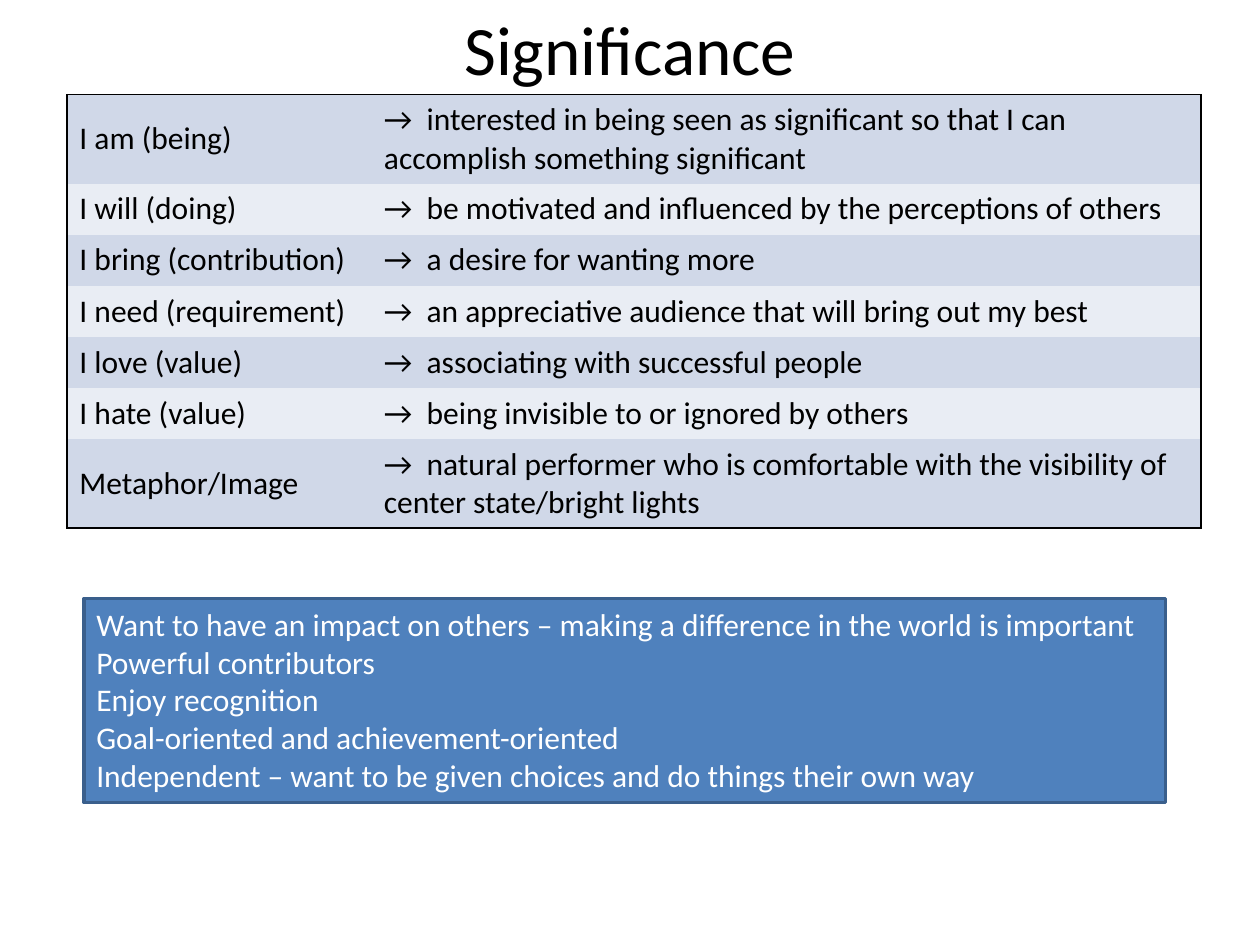
from dataclasses import dataclass

from lxml.etree import SubElement
from pptx import Presentation
from pptx.dml.color import RGBColor as Color
from pptx.enum.shapes import MSO_SHAPE as Shape
from pptx.enum.text import MSO_ANCHOR as Anchor, PP_ALIGN as Align
from pptx.oxml.ns import qn
from pptx.util import Pt

TITLE = "Significance"
STATEMENTS = [
    ("I am (being)", "interested in being seen as significant so that I can accomplish something significant"),
    ("I will (doing)", "be motivated and influenced by the perceptions of others"),
    ("I bring (contribution)", "a desire for wanting more"),
    ("I need (requirement)", "an appreciative audience that will bring out my best"),
    ("I love (value)", "associating with successful people"),
    ("I hate (value)", "being invisible to or ignored by others"),
    ("Metaphor/Image", "natural performer who is comfortable with the visibility of center state/bright lights"),
]
TRAITS = [
    "Want to have an impact on others – making a difference in the world is important",
    "Powerful contributors",
    "Enjoy recognition",
    "Goal-oriented and achievement-oriented",
    "Independent – want to be given choices and do things their own way",
]

TITLE_AREA = (36, 12.25, 648, 30)
TABLE_LEFT, TABLE_TOP = 38.2, 54
COLUMN_WIDTHS = (174, 474)
ROW_HEIGHT, TALL_ROW_HEIGHT = 29.2, 50.9
TALL_ROWS = (0, len(STATEMENTS) - 1)
TRAITS_AREA = (48, 342, 618, 116.64)


@dataclass(frozen=True)
class Theme:
    font: str = "Calibri"
    title_size: float = 39.6
    body_size: float = 18
    text: str = "000000"
    light_text: str = "FFFFFF"
    bands: tuple = ("D0D8E8", "E9EDF4")
    box_fill: str = "4F81BD"
    box_line: str = "3A5F8C"


THEME = Theme()


def write(frame, lines, size, color, align=Align.LEFT):
    frame.word_wrap = True
    for index, line in enumerate(lines):
        para = frame.add_paragraph() if index else frame.paragraphs[0]
        para.text = line
        para.alignment = align
        para.font.name = THEME.font
        para.font.size = Pt(size)
        para.font.color.rgb = Color.from_string(color)


def set_borders(cell, visible):
    """Draw the visible sides in black and hide the others."""
    properties = cell._tc.get_or_add_tcPr()
    for index, side in enumerate(("lnL", "lnR", "lnT", "lnB")):
        line = properties.makeelement(qn(f"a:{side}"), {"w": str(Pt(1))})
        if side in visible:
            fill = SubElement(line, qn("a:solidFill"))
            SubElement(fill, qn("a:srgbClr"), val=THEME.text)
        else:
            SubElement(line, qn("a:noFill"))
        properties.insert(index, line)


def add_title(slide):
    frame = slide.shapes.add_textbox(*map(Pt, TITLE_AREA)).text_frame
    frame.vertical_anchor = Anchor.MIDDLE
    write(frame, [TITLE], THEME.title_size, THEME.text, Align.CENTER)


def add_statements(slide):
    heights = [TALL_ROW_HEIGHT if row in TALL_ROWS else ROW_HEIGHT for row in range(len(STATEMENTS))]
    area = (TABLE_LEFT, TABLE_TOP, sum(COLUMN_WIDTHS), sum(heights))
    table = slide.shapes.add_table(len(STATEMENTS), len(COLUMN_WIDTHS), *map(Pt, area)).table
    table.first_row = False
    for column, width in zip(table.columns, COLUMN_WIDTHS):
        column.width = Pt(width)
    for row, (label, meaning) in enumerate(STATEMENTS):
        table.rows[row].height = Pt(heights[row])
        edges = {"lnT"} if row == 0 else {"lnB"} if row == len(STATEMENTS) - 1 else set()
        for column, (text, side) in enumerate([(label, "lnL"), (f"→  {meaning}", "lnR")]):
            cell = table.cell(row, column)
            cell.vertical_anchor = Anchor.MIDDLE
            cell.fill.solid()
            cell.fill.fore_color.rgb = Color.from_string(THEME.bands[row % 2])
            set_borders(cell, edges | {side})
            write(cell.text_frame, [text], THEME.body_size, THEME.text)


def add_traits(slide):
    box = slide.shapes.add_shape(Shape.RECTANGLE, *map(Pt, TRAITS_AREA))
    box.shadow.inherit = False
    box.fill.solid()
    box.fill.fore_color.rgb = Color.from_string(THEME.box_fill)
    box.line.color.rgb = Color.from_string(THEME.box_line)
    box.line.width = Pt(2)
    box.text_frame.vertical_anchor = Anchor.TOP
    write(box.text_frame, TRAITS, THEME.body_size, THEME.light_text)


def main():
    deck = Presentation()
    deck.slide_width, deck.slide_height = Pt(720), Pt(540)
    slide = deck.slides.add_slide(deck.slide_layouts[6])
    add_title(slide)
    add_statements(slide)
    add_traits(slide)
    deck.save("out.pptx")


if __name__ == "__main__":
    main()
